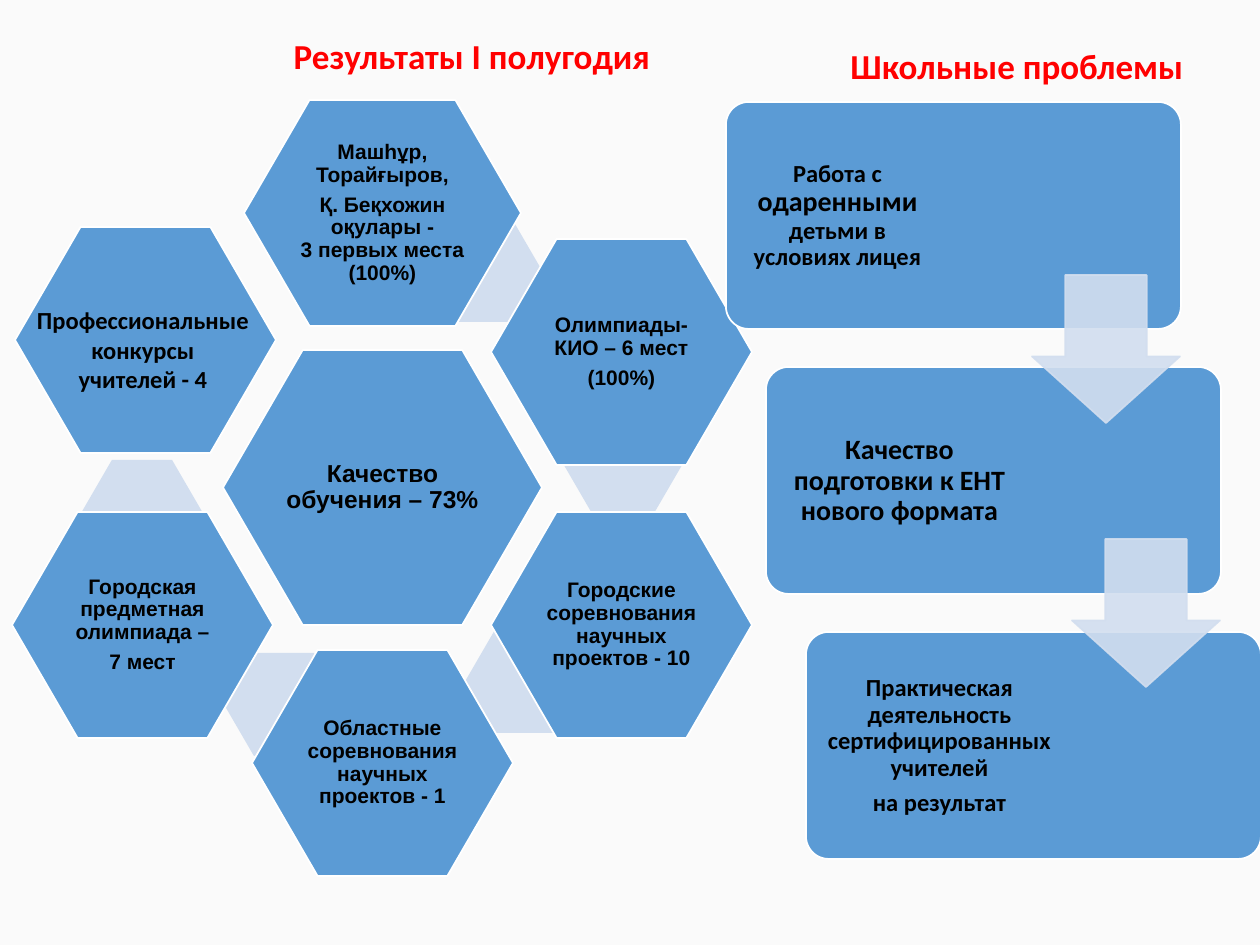
from lxml import etree
from pptx import Presentation
from pptx.dml.color import RGBColor
from pptx.enum.shapes import MSO_SHAPE
from pptx.enum.text import MSO_ANCHOR, MSO_AUTO_SIZE, PP_ALIGN
from pptx.oxml.ns import qn
from pptx.util import Emu, Pt

HEXAGON, CARD, ARROW = MSO_SHAPE.HEXAGON, MSO_SHAPE.ROUNDED_RECTANGLE, MSO_SHAPE.DOWN_ARROW
TOP, MIDDLE = MSO_ANCHOR.TOP, MSO_ANCHOR.MIDDLE
LEFT, CENTER = PP_ALIGN.LEFT, PP_ALIGN.CENTER
GROW, FIXED = MSO_AUTO_SIZE.SHAPE_TO_FIT_TEXT, MSO_AUTO_SIZE.NONE

SCALE = 914400 / 126  # EMU per px
THEME = {
    "back": RGBColor.from_string("FAFAFA"),
    "blue": RGBColor.from_string("5B9BD5"),
    "pale": RGBColor.from_string("D2DEEF"),
    "white": RGBColor.from_string("FFFFFF"),
    "text": RGBColor.from_string("000000"),
    "heading": RGBColor.from_string("FF0000"),
    "cell_font": "Arial", "card_font": "Calibri",
    "heading_size": 20, "large": 16, "medium": 14, "small": 12,
}


def add_figure(kind, area, adjustments, fill, line=None, opacity=100):
    """Draw a preset shape; area is left, top, width, height in px."""
    shape = page.shapes.add_shape(kind, *[Emu(round(n * SCALE)) for n in area])
    shape.shadow.inherit = False
    for index, value in enumerate(adjustments):
        shape.adjustments[index] = value
    shape.fill.solid()
    shape.fill.fore_color.rgb = THEME[fill]
    if line:
        shape.line.color.rgb = THEME[line]
        shape.line.width = Pt(1)
    else:
        shape.line.fill.background()
    if opacity < 100:
        for color in shape._element.spPr.iter(qn("a:srgbClr")):
            etree.SubElement(color, qn("a:alpha"), val=str(opacity * 1000))


def write(box, area, paragraphs, font, size, color="text", align=CENTER,
          inset=None, spacing=1.0, after=0.0):
    """Fill a box; a paragraph is a list of (text, size) spans or one string.

    A box without an inset keeps the default margins and grows with its text."""
    box.left, box.top, box.width, box.height = [Emu(round(n * SCALE)) for n in area]
    frame = box.text_frame
    grows = inset is None
    formats = {"word_wrap": not grows, "auto_size": GROW if grows else FIXED,
               "vertical_anchor": TOP if grows else MIDDLE}
    if not grows:
        for side in ("left", "top", "right", "bottom"):
            formats["margin_" + side] = Emu(round(inset * SCALE))
    for name, value in formats.items():
        setattr(frame, name, value)
    for number, content in enumerate(paragraphs):
        para = frame.add_paragraph() if number else frame.paragraphs[0]
        for name, value in {"alignment": align, "line_spacing": spacing,
                            "space_before": Pt(0),
                            "space_after": Pt(round(after * size, 1))}.items():
            setattr(para, name, value)
        spans = [(content, size)] if isinstance(content, str) else content
        for words, points in spans:
            for part_number, part in enumerate(words.split("\n")):
                if part_number:
                    para.add_line_break()
                span = para.add_run()
                span.text = part
                span.font.color.rgb = THEME[color]
                for name, value in {"name": THEME[font], "size": Pt(points),
                                    "bold": True}.items():
                    setattr(span.font, name, value)


deck = Presentation()
deck.slide_width, deck.slide_height = Emu(round(1260 * SCALE)), Emu(round(945 * SCALE))
page = deck.slides.add_slide(deck.slide_layouts[5])
page.background.fill.solid()
page.background.fill.fore_color.rgb = THEME["back"]

# Headings
problems_heading = page.shapes.add_textbox(0, 0, 0, 0)
for box, area, words in (
    (page.shapes.title, (281, 28, 391, 55), "Результаты І полугодия"),
    (problems_heading, (838, 38, 360, 55), "Школьные проблемы"),
):
    write(box, area, [words], "card_font", THEME["heading_size"], "heading", LEFT)

# Results: hexagon area, corner of the pale link behind it, text
small, medium, large = THEME["small"], THEME["medium"], THEME["large"]
cells = [
    ((223, 350, 319, 275), None, medium, ["Качество обучения – 73%"]),
    ((244, 100, 277, 226), (422, 219), small,
     ["Машhұр, Торайғыров,", "Қ. Беқхожин оқулары -\n3 первых места (100%)"]),
    ((491, 239, 261, 226), (563, 412), small, ["Олимпиады- КИО – 6 мест", "(100%)"]),
    ((491, 512, 261, 226), (465, 630), small,
     ["Городские соревнования научных проектов - 10"]),
    ((252, 650, 261, 226), (224, 653), small,
     ["Областные соревнования научных проектов - 1"]),
    ((12, 512, 261, 226), (82, 460), small,
     ["Городская предметная олимпиада –", "7 мест"]),
    ((15, 227, 261, 226), None, None, None),
]
for area, link, size, paragraphs in cells:
    if link:
        add_figure(HEXAGON, (*link, 120, 103), [0.29], "pale")
    add_figure(HEXAGON, area, [0.29], "blue", "white")
    if paragraphs:
        left, top, width, height = area
        inner = (left + width / 6, top + height / 6, width * 2 / 3, height * 2 / 3)
        write(page.shapes.add_textbox(0, 0, 0, 0), inner, paragraphs, "cell_font", size,
              inset=2, spacing=0.9, after=0.35)

# Label of the last hexagon
write(page.shapes.add_textbox(0, 0, 0, 0), (24, 299, 238, 102),
      ["Профессиональные", "конкурсы", "учителей - 4"], "card_font", medium)

# Problems: stepped cards
cards = [
    (209, 8, medium, [[("Работа с ", medium), ("одаренными", large),
                       (" детьми в условиях лицея", medium)]]),
    (253, 9, large, ["Качество подготовки к ЕНТ нового формата"]),
    (253, 8, medium, ["Практическая деятельность сертифицированных учителей",
                      "на результат"]),
]
for step, (width, inset, size, paragraphs) in enumerate(cards):
    left, top = 726 + 40 * step, 102 + 265 * step
    add_figure(CARD, (left, top, 455, 227), [0.1], "blue", "white")
    write(page.shapes.add_textbox(0, 0, 0, 0), (left + 7, top + 7, width, 214),
          paragraphs, "card_font", size, inset=inset, spacing=0.9, after=0.35)

# Arrows between the cards
for step in range(len(cards) - 1):
    add_figure(ARROW, (1032 + 40 * step, 275 + 264 * step, 148, 148),
               [0.45, 0.55], "pale", "pale", 90)
    # The shaft is set by the first value, the head by the second
    page.shapes[-1].adjustments[0] = 0.55
    page.shapes[-1].adjustments[1] = 0.45

deck.save("out.pptx")
